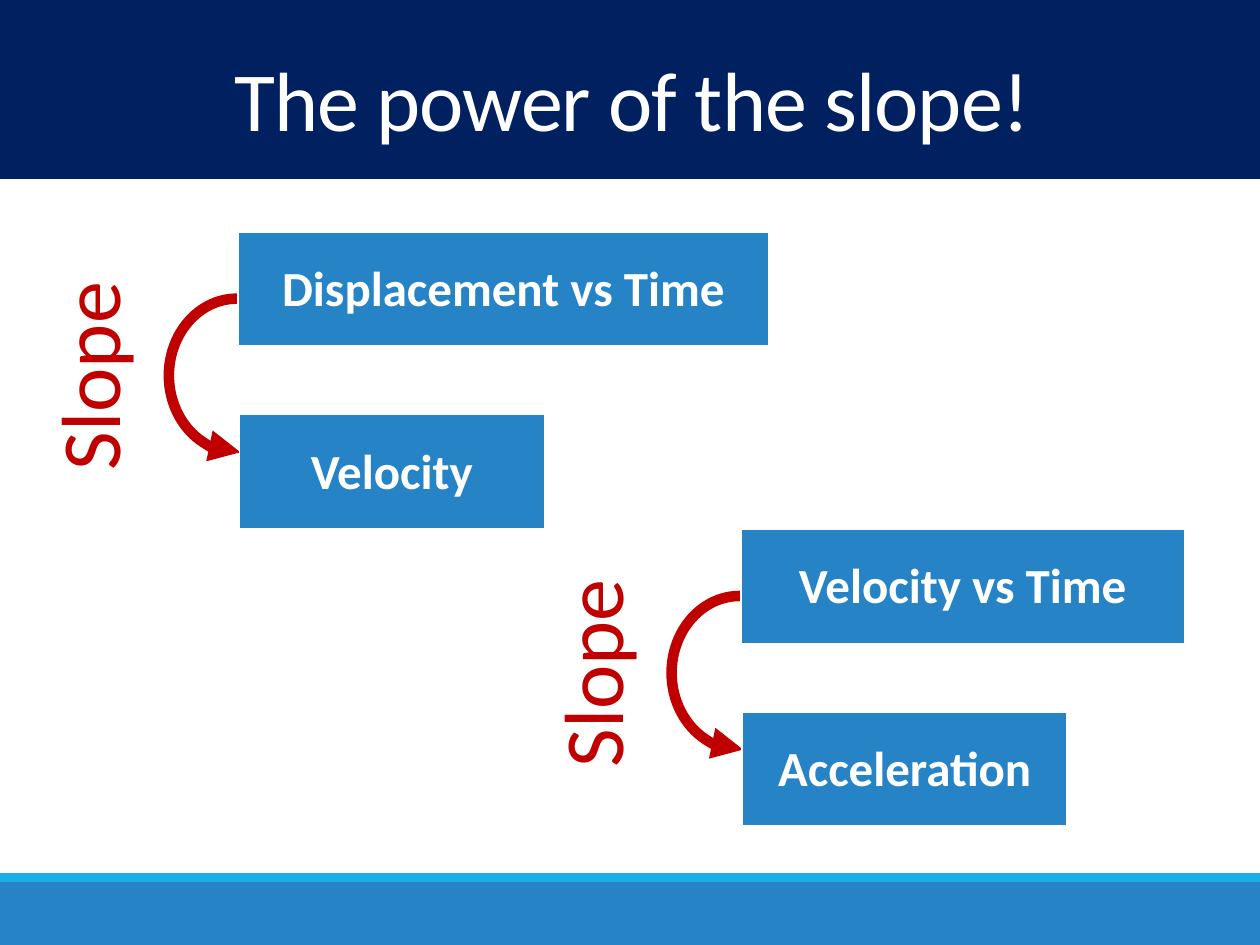
import lxml.etree
import pptx
import pptx.dml.color
import pptx.enum.shapes
import pptx.enum.text
import pptx.oxml.ns
import pptx.util
from pptx.util import Inches

COLORS = {
    "navy": "002060",
    "blue": "2683C6",
    "cyan": "1CADE4",
    "red": "C00000",
    "white": "FFFFFF",
}


def rgb(name):
    return pptx.dml.color.RGBColor.from_string(COLORS[name])


def add_element(parent, tag, **attributes):
    return lxml.etree.SubElement(parent, pptx.oxml.ns.qn(tag), attributes)


def write_text(frame, text, size=28, color="white", bold=False, align=None,
               line_spacing=None, spacing=None):
    paragraph = frame.paragraphs[0]
    paragraph.alignment = align
    paragraph.line_spacing = line_spacing
    run = paragraph.add_run()
    run.text = text
    run.font.name = "Calibri"
    run.font.size = pptx.util.Pt(size)
    run.font.bold = bold
    run.font.color.rgb = rgb(color)
    if spacing is not None:
        run.font._element.set("spc", str(int(spacing * 100)))


class SlideBuilder:
    center = pptx.enum.text.PP_ALIGN.CENTER
    middle = pptx.enum.text.MSO_ANCHOR.MIDDLE
    heading_size = 48
    box_height = 0.92
    borders = {"a:lnL": 1, "a:lnR": 1, "a:lnT": 1, "a:lnB": 3}

    def __init__(self, slide):
        self.slide = slide

    def band(self, top, height, color):
        shape = self.slide.shapes.add_shape(
            pptx.enum.shapes.MSO_SHAPE.RECTANGLE,
            Inches(0), Inches(top), Inches(10), Inches(height))
        shape.shadow.inherit = False
        shape.fill.solid()
        shape.fill.fore_color.rgb = rgb(color)
        shape.line.fill.background()

    def title(self, text):
        shape = self.slide.shapes.title
        self.slide.shapes._spTree.append(shape._element)
        shape.left, shape.top = Inches(0.03), Inches(0.42)
        shape.width, shape.height = Inches(9.97), Inches(0.84)
        frame = shape.text_frame
        frame.auto_size = pptx.enum.text.MSO_AUTO_SIZE.NONE
        frame.vertical_anchor = self.middle
        write_text(frame, text, size=self.heading_size, align=self.center,
                   line_spacing=0.85, spacing=-0.5)

    def curved_arrow(self, left, top):
        shape = self.slide.shapes.add_shape(
            pptx.enum.shapes.MSO_SHAPE.ARC,
            Inches(left), Inches(top), Inches(1.08), Inches(1.22))
        shape.adjustments[0] = 161.32
        shape.adjustments[1] = 55.54
        shape._element.spPr.xfrm.set("flipH", "1")
        shape.shadow.inherit = False
        shape.fill.background()
        shape.line.color.rgb = rgb("red")
        shape.line.width = pptx.util.Pt(6)
        add_element(shape.line._get_or_add_ln(), "a:tailEnd", type="triangle")

    def vertical_label(self, left, top, text):
        shape = self.slide.shapes.add_textbox(
            Inches(left), Inches(top), Inches(1.69), Inches(0.91))
        shape.rotation = 270
        frame = shape.text_frame
        frame.word_wrap = False
        frame.auto_size = pptx.enum.text.MSO_AUTO_SIZE.SHAPE_TO_FIT_TEXT
        write_text(frame, text, size=self.heading_size, color="red")

    def box(self, left, top, width, text):
        shape = self.slide.shapes.add_table(
            1, 1, Inches(left), Inches(top), Inches(width), Inches(self.box_height))
        cell = shape.table.cell(0, 0)
        properties = cell._tc.get_or_add_tcPr()
        for tag, points in self.borders.items():
            line = add_element(properties, tag, w=str(pptx.util.Pt(points)))
            fill = add_element(line, "a:solidFill")
            add_element(fill, "a:srgbClr", val=COLORS["white"])
        cell.fill.solid()
        cell.fill.fore_color.rgb = rgb("blue")
        cell.vertical_anchor = self.middle
        write_text(cell.text_frame, text, bold=True, align=self.center)

    def slope_step(self, left, top, graph, graph_width, result, result_width):
        self.curved_arrow(left - 0.55, top + 0.53)
        self.vertical_label(left - 2.04, top + 0.69, "Slope")
        self.box(left, top, graph_width, graph)
        self.box(left + 0.01, top + 1.45, result_width, result)


def main():
    presentation = pptx.Presentation()
    presentation.slide_width = Inches(10)
    presentation.slide_height = Inches(7.5)
    builder = SlideBuilder(presentation.slides.add_slide(presentation.slide_layouts[5]))
    builder.band(7, 0.5, "blue")
    builder.band(6.93, 0.07, "cyan")
    builder.band(0, 1.42, "navy")
    builder.title("The power of the slope!")
    builder.slope_step(1.89, 1.84, "Displacement vs Time", 4.21, "Velocity", 2.42)
    builder.slope_step(5.88, 4.2, "Velocity vs Time", 3.52, "Acceleration", 2.58)
    presentation.save("out.pptx")


if __name__ == "__main__":
    main()
